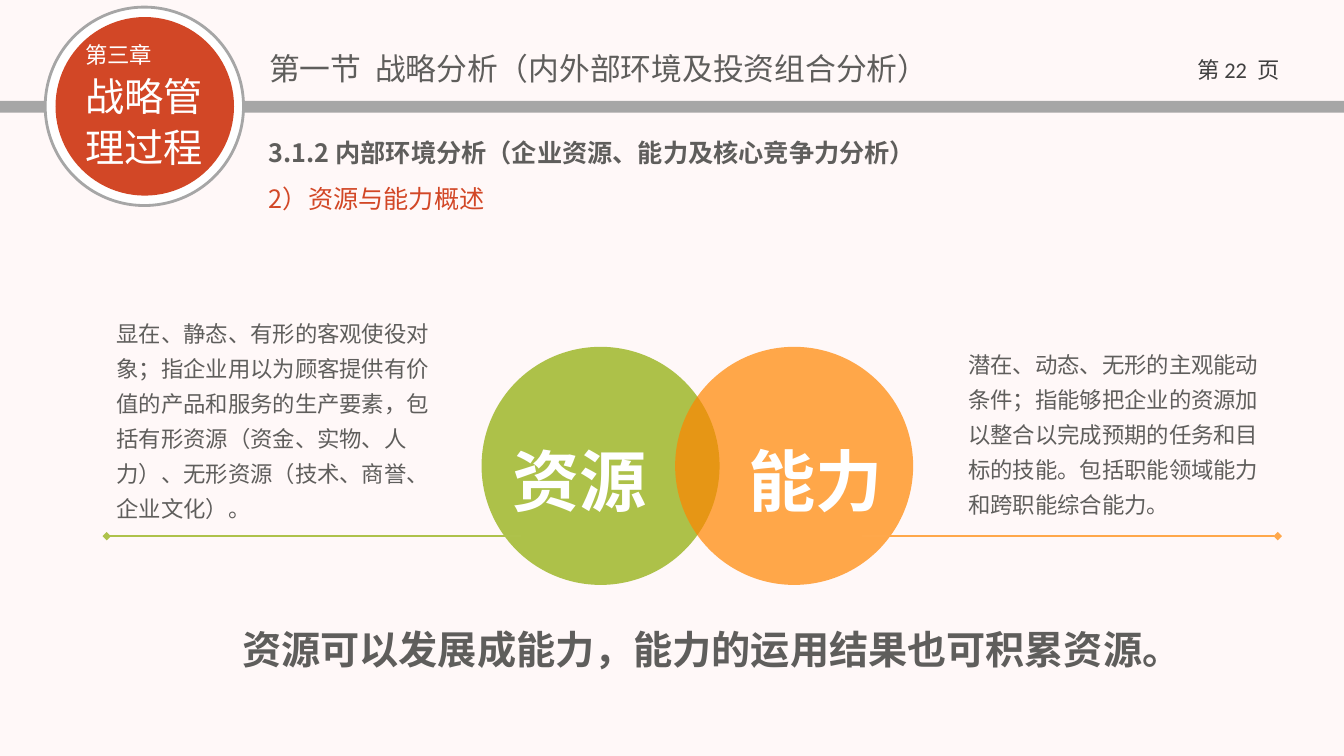
from pptx import Presentation
from pptx.dml.color import RGBColor
from pptx.enum.shapes import MSO_CONNECTOR, MSO_SHAPE
from pptx.enum.text import MSO_ANCHOR, MSO_AUTO_SIZE, PP_ALIGN
from pptx.oxml.ns import qn
from pptx.util import Cm, Pt
from lxml.etree import SubElement

BACKGROUND = RGBColor(0xFF, 0xF8, 0xF8)
WHITE = RGBColor(0xFF, 0xFF, 0xFF)
GREY = RGBColor(0xA6, 0xA6, 0xA6)
TEXT = RGBColor(0x5F, 0x5E, 0x5C)
DARK = RGBColor(0x40, 0x40, 0x40)
RED = RGBColor(0xD2, 0x47, 0x26)
GREEN = RGBColor(0x8B, 0xAB, 0x00)
ORANGE = RGBColor(0xFF, 0x85, 0x00)
LIGHT_GREEN = RGBColor(0xAE, 0xC2, 0x4B)
LIGHT_ORANGE = RGBColor(0xFF, 0xA8, 0x4B)
CJK = "Noto Sans CJK SC"

prs = Presentation()
prs.slide_width, prs.slide_height = Cm(33.88), Cm(19.05)
s = prs.slides.add_slide(prs.slide_layouts[5])
s.background.fill.solid()
s.background.fill.fore_color.rgb = BACKGROUND


def add_filled(kind, x, y, w, h, color):
    sp = s.shapes.add_shape(kind, Cm(x), Cm(y), Cm(w), Cm(h))
    sp.shadow.inherit = False
    sp.fill.solid()
    sp.fill.fore_color.rgb = color
    sp.line.fill.background()
    return sp


def add_text(x, y, w, h, paras, color, bold=False, align=PP_ALIGN.LEFT, spacing=1.0, sp=None):
    sp = sp or s.shapes.add_textbox(0, 0, 0, 0)
    sp.left, sp.top, sp.width, sp.height = Cm(x), Cm(y), Cm(w), Cm(h)
    tf = sp.text_frame
    tf.word_wrap = True
    tf.auto_size = MSO_AUTO_SIZE.NONE
    tf.vertical_anchor = MSO_ANCHOR.TOP
    for i, runs in enumerate(paras):
        p = tf.add_paragraph() if i else tf.paragraphs[0]
        p.alignment, p.line_spacing = align, spacing
        for text, size, font in runs:
            r = p.add_run()
            r.text = text
            r.font.size, r.font.bold, r.font.name = Pt(size), bold, font
            r.font.color.rgb = color
            SubElement(r.font._element, qn("a:ea")).set("typeface", CJK)
    return tf


add_filled(MSO_SHAPE.RECTANGLE, 0, 2.54, 33.88, 0.3, GREY)
ring = add_filled(MSO_SHAPE.OVAL, 1.14, 0.18, 5, 5, WHITE)
ring.line.color.rgb = GREY
ring.line.width = Pt(2)
add_filled(MSO_SHAPE.OVAL, 1.4, 0.43, 4.5, 4.5, RED)

add_text(29.69, 1.3, 3.05, 1.02,
         [[("第 ", 16, CJK), ("22  ", 16, "Calibri"), ("页", 16, CJK)]],
         DARK, align=PP_ALIGN.CENTER)
chapter = add_text(1.9, 0.91, 4.39, 3.56,
                   [[("第三章", 16, CJK)], [("战略管", 28, CJK)], [("理过程", 28, CJK)]], WHITE)
chapter.paragraphs[0].space_before = Pt(4)
for p in chapter.paragraphs:
    p.space_after = Pt(3)

add_text(6.53, 1.12, 19.41, 1.19,
         [[("第一节  战略分析（内外部环境及投资组合分析）", 22, CJK)]], TEXT, sp=s.shapes.title)
add_text(6.53, 3.12, 17.6, 1.24,
         [[("3.1.2 内部环境分析（企业资源、能力及核心竞争力分析）", 18, CJK)]],
         TEXT, bold=True, spacing=1.3)
add_text(6.53, 4.27, 7.01, 1.12, [[("2）资源与能力概述", 18, CJK)]], RED, spacing=1.3)

for label, x, text_x, text_w, color in [
    ("资源", 12.14, 12.42, 4.37, GREEN),
    ("能力", 17.02, 18.29, 4.55, ORANGE),
]:
    circle = add_filled(MSO_SHAPE.OVAL, x, 8.74, 6, 6, color)
    rgb = circle.fill._xPr.find(qn("a:solidFill"))[0]
    SubElement(rgb, qn("a:alpha")).set("val", "70000")
    add_text(text_x, 10.34, text_w, 2.67, [[(label, 48, CJK)]],
             WHITE, bold=True, align=PP_ALIGN.CENTER, spacing=1.3)

for text, x, y, w, h in [
    ("显在、静态、有形的客观使役对象；指企业用以为顾客提供有价值的产品和服务的生产要素，"
     "包括有形资源（资金、实物、人力）、无形资源（技术、商誉、企业文化）。", 2.69, 7.75, 8.86, 5.59),
    ("潜在、动态、无形的主观能动条件；指能够把企业的资源加以整合以完成预期的任务和目标的技能。"
     "包括职能领域能力和跨职能综合能力。", 24.16, 8.53, 8.2, 4.7),
]:
    add_text(x, y, w, h, [[(text, 16, CJK)]], TEXT, spacing=1.3)

for x1, x2, color, end in [
    (2.69, 13.13, LIGHT_GREEN, "a:headEnd"),
    (21.74, 32.21, LIGHT_ORANGE, "a:tailEnd"),
]:
    rule = s.shapes.add_connector(MSO_CONNECTOR.STRAIGHT, Cm(x1), Cm(13.51), Cm(x2), Cm(13.51))
    rule.line.color.rgb = color
    rule.line.width = Pt(1.5)
    SubElement(rule.line._get_or_add_ln(), qn(end)).set("type", "diamond")
    SubElement(rule._element.spPr, qn("a:effectLst"))

summary = add_text(2.69, 15.27, 30.51, 1.65,
                   [[("资源可以发展成能力，能力的运用结果也可积累资源。", 28, CJK)]],
                   TEXT, bold=True, align=PP_ALIGN.CENTER, spacing=1.3)
summary.paragraphs[0].space_after = Pt(6)

prs.save("out.pptx")
